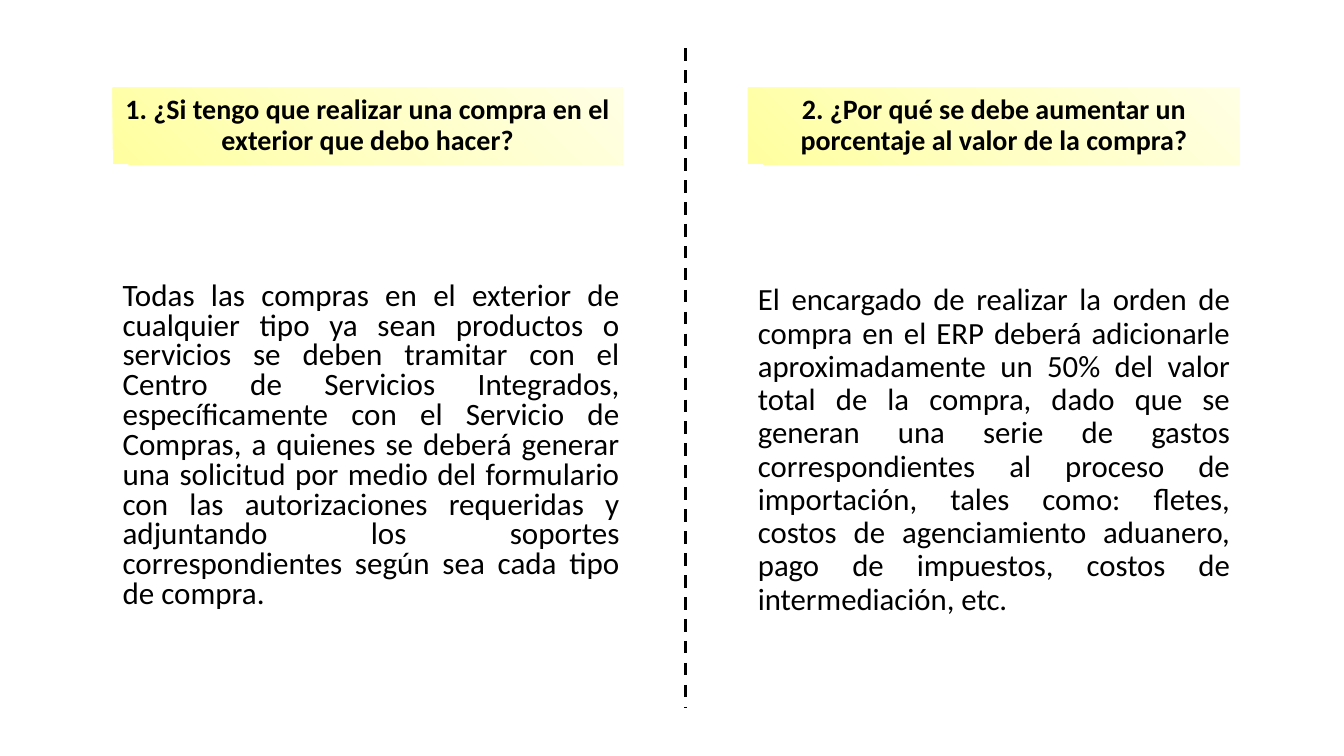
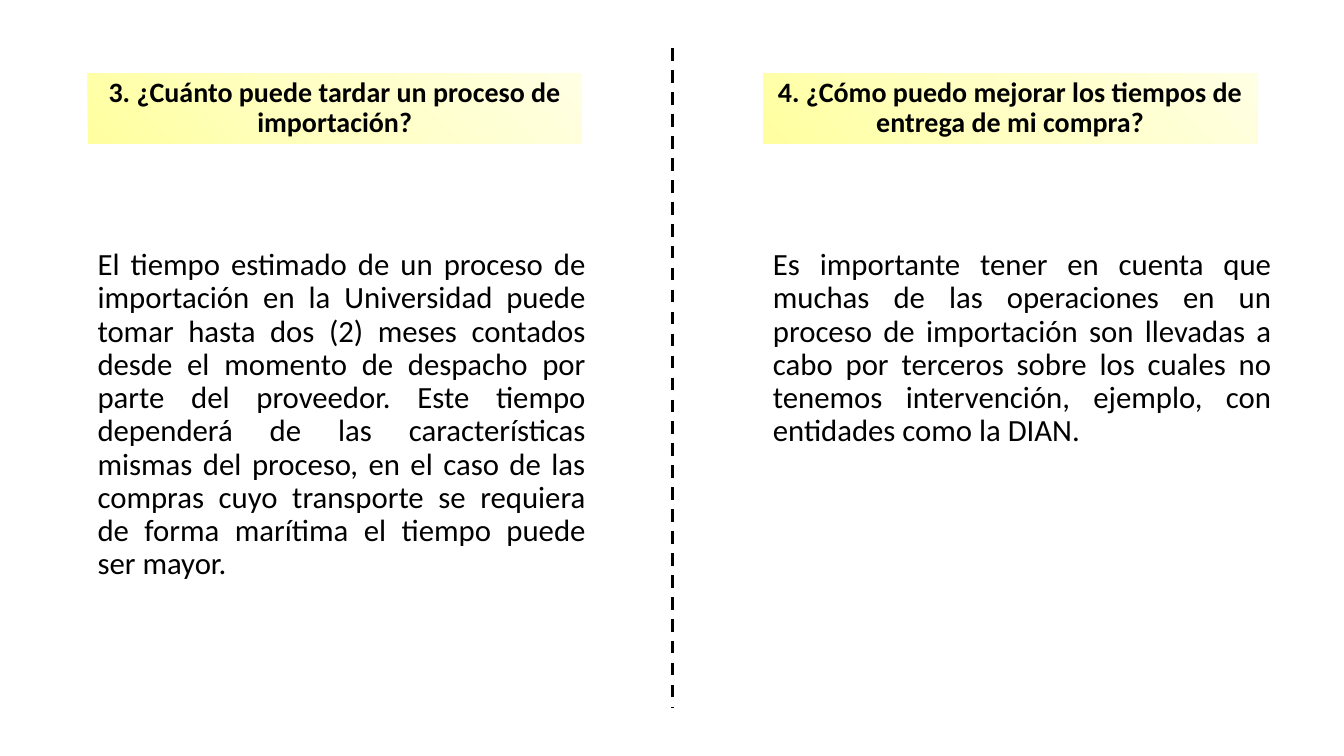
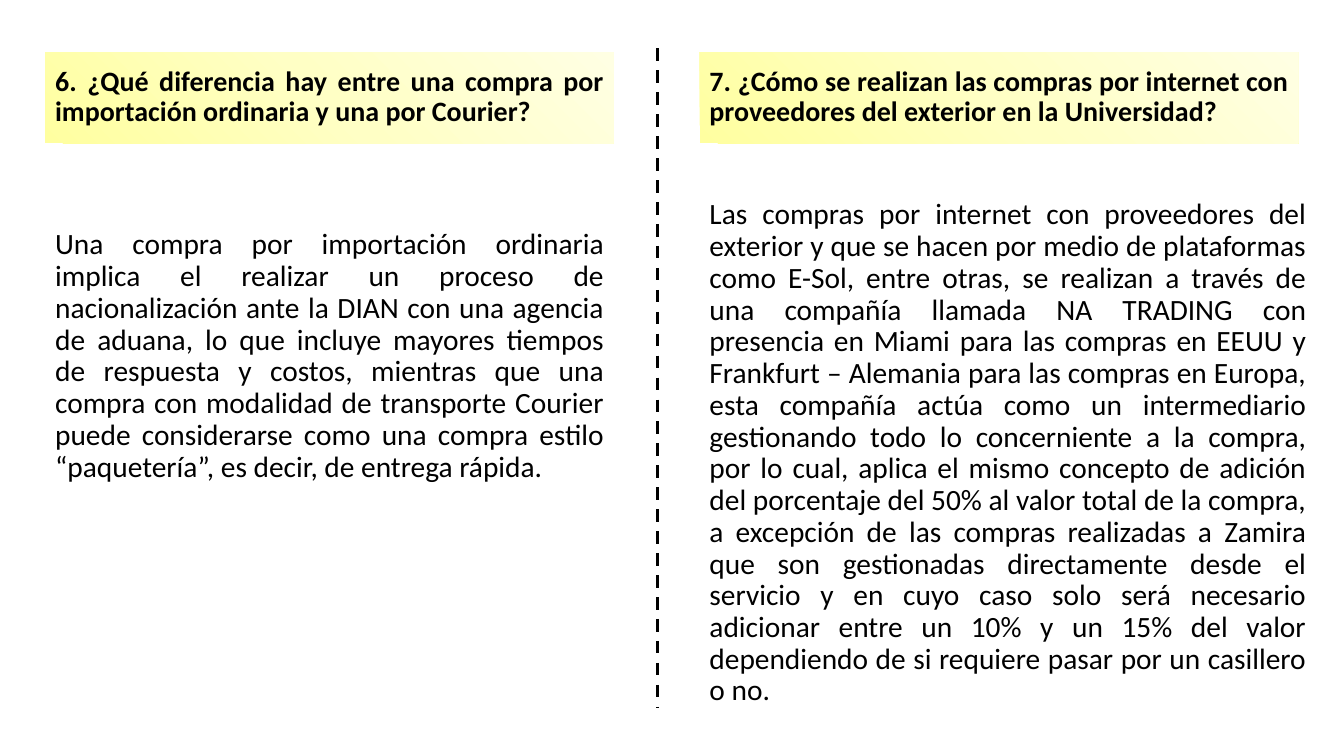
from copy import deepcopy
from dataclasses import dataclass

from lxml.etree import SubElement
from pptx import Presentation
from pptx.dml.color import RGBColor
from pptx.enum.dml import MSO_LINE
from pptx.enum.shapes import MSO_CONNECTOR, MSO_SHAPE
from pptx.enum.text import MSO_ANCHOR, PP_ALIGN
from pptx.oxml.ns import qn
from pptx.util import Cm, Pt


@dataclass(frozen=True)
class Theme:
    font: str = "Calibri"
    ink: RGBColor = RGBColor(0, 0, 0)
    band: tuple = ("FFFFA0", "FFFFC5", "FFFFE3")
    band_angle: int = 45
    question_size: float = 20
    answer_size: float = 22
    small_answer_size: float = 21
    tight_answer_size: float = 22.2
    spacing: float = 0.9
    tight_spacing: float = 0.8
    space_before: float = 10
    divider_width: float = 2.25


THEME = Theme()


class Deck:
    def __init__(self, theme):
        self.theme = theme
        self.prs = Presentation()
        self.prs.slide_width, self.prs.slide_height = Cm(33.87), Cm(19.05)
        self.slide = None

    def new_slide(self):
        self.slide = self.prs.slides.add_slide(self.prs.slide_layouts[6])

    def set_text(self, sp, text, size, align, spacing, bold=False):
        tf = sp.text_frame
        tf.word_wrap = True
        p = tf.paragraphs[0]
        p.text = text
        p.alignment = align
        p.line_spacing = spacing
        p.space_before = Pt(self.theme.space_before)
        p.font.name = self.theme.font
        p.font.size = Pt(size)
        p.font.bold = bold
        p.font.color.rgb = self.theme.ink

    def question(self, box, text, align):
        sp = self.slide.shapes.add_shape(MSO_SHAPE.RECTANGLE, *map(Cm, box))
        sp.shadow.inherit = False
        sp.line.fill.background()
        sp.fill.gradient()
        sp.fill.gradient_angle = self.theme.band_angle
        stops = sp._element.spPr.find(".//" + qn("a:gsLst"))
        stops.append(deepcopy(stops[0]))
        for i, (stop, color) in enumerate(zip(sp.fill.gradient_stops, self.theme.band)):
            stop.position = i / (len(self.theme.band) - 1)
            stop.color.rgb = RGBColor.from_string(color)
        sp.text_frame.vertical_anchor = MSO_ANCHOR.MIDDLE
        self.set_text(sp, text, self.theme.question_size, align, self.theme.spacing, True)

    def answer(self, box, text, size, spacing):
        sp = self.slide.shapes.add_textbox(*map(Cm, box))
        self.set_text(sp, text, size, PP_ALIGN.JUSTIFY, spacing)

    def divider(self, x):
        line = self.slide.shapes.add_connector(
            MSO_CONNECTOR.STRAIGHT, Cm(x), Cm(1.22), Cm(x), Cm(17.83))
        line.line.color.rgb = self.theme.ink
        line.line.width = Pt(self.theme.divider_width)
        line.line.dash_style = MSO_LINE.DASH
        SubElement(line._element.spPr, qn("a:effectLst"))


@dataclass
class Column:
    left: float
    band_width: float
    answer_top: float
    answer_width: float
    answer_height: float
    question: str
    answer: str
    size: float = THEME.answer_size
    spacing: float = THEME.spacing


@dataclass
class Page:
    divider: float
    band_top: float
    band_height: float
    columns: tuple
    align: PP_ALIGN = PP_ALIGN.CENTER


PAGES = (
    Page(17.27, 2.21, 1.93, (
        Column(
            2.84, 12.85, 6.99, 13.03, 8.86,
            "1. ¿Si tengo que realizar una compra en el exterior que debo hacer?",
            "Todas las compras en el exterior de cualquier tipo ya sean productos o "
            "servicios se deben tramitar con el Centro de Servicios Integrados, "
            "específicamente con el Servicio de Compras, a quienes se deberá generar "
            "una solicitud por medio del formulario con las autorizaciones requeridas "
            "y adjuntando los soportes correspondientes según sea cada tipo de compra.",
            THEME.tight_answer_size, THEME.tight_spacing),
        Column(
            18.85, 12.4, 7.04, 12.4, 7.59,
            "2. ¿Por qué se debe aumentar un porcentaje al valor de la compra?",
            "El encargado de realizar la orden de compra en el ERP deberá adicionarle "
            "aproximadamente un 50% del valor total de la compra, dado que se generan "
            "una serie de gastos correspondientes al proceso de importación, tales "
            "como: fletes, costos de agenciamiento aduanero, pago de impuestos, costos "
            "de intermediación, etc."),
    )),
    Page(16.94, 1.85, 1.78, (
        Column(
            2.21, 12.45, 6.15, 12.8, 7.87,
            "3. ¿Cuánto puede tardar un proceso de importación?",
            "El tiempo estimado de un proceso de importación en la Universidad puede "
            "tomar hasta dos (2) meses contados desde el momento de despacho por parte "
            "del proveedor. Este tiempo dependerá de las características mismas del "
            "proceso, en el caso de las compras cuyo transporte se requiera de forma "
            "marítima el tiempo puede ser mayor."),
        Column(
            19.23, 12.45, 6.15, 13.06, 4.5,
            "4. ¿Cómo puedo mejorar los tiempos de entrega de mi compra?",
            "Es importante tener en cuenta que muchas de las operaciones en un proceso "
            "de importación son llevadas a cabo por terceros sobre los cuales no "
            "tenemos intervención, ejemplo, con entidades como la DIAN."),
    )),
    Page(16.56, 1.32, 2.29, (
        Column(
            1.14, 14.33, 5.66, 14.33, 6.17,
            "6. ¿Qué diferencia hay entre una compra por importación ordinaria y una "
            "por Courier?",
            "Una compra por importación ordinaria implica el realizar un proceso de "
            "nacionalización ante la DIAN con una agencia de aduana, lo que incluye "
            "mayores tiempos de respuesta y costos, mientras que una compra con "
            "modalidad de transporte Courier puede considerarse como una compra estilo "
            "“paquetería”, es decir, de entrega rápida.",
            THEME.small_answer_size),
        Column(
            17.63, 15.09, 4.9, 15.54, 12.8,
            "7. ¿Cómo se realizan las compras por internet con proveedores del "
            "exterior en la Universidad?",
            "Las compras por internet con proveedores del exterior y que se hacen por "
            "medio de plataformas como E-Sol, entre otras, se realizan a través de una "
            "compañía llamada NA TRADING con presencia en Miami para las compras en "
            "EEUU y Frankfurt – Alemania para las compras en Europa, esta compañía "
            "actúa como un intermediario gestionando todo lo concerniente a la compra, "
            "por lo cual, aplica el mismo concepto de adición del porcentaje del 50% "
            "al valor total de la compra, a excepción de las compras realizadas a "
            "Zamira que son gestionadas directamente desde el servicio y en cuyo caso "
            "solo será necesario adicionar entre un 10% y un 15% del valor dependiendo "
            "de si requiere pasar por un casillero o no.",
            THEME.small_answer_size),
    ), PP_ALIGN.JUSTIFY),
)


def main():
    deck = Deck(THEME)
    for page in PAGES:
        deck.new_slide()
        for col in page.columns:
            deck.question((col.left, page.band_top, col.band_width, page.band_height),
                          col.question, page.align)
            deck.answer((col.left, col.answer_top, col.answer_width, col.answer_height),
                        col.answer, col.size, col.spacing)
        deck.divider(page.divider)
    deck.prs.save("out.pptx")


if __name__ == "__main__":
    main()
